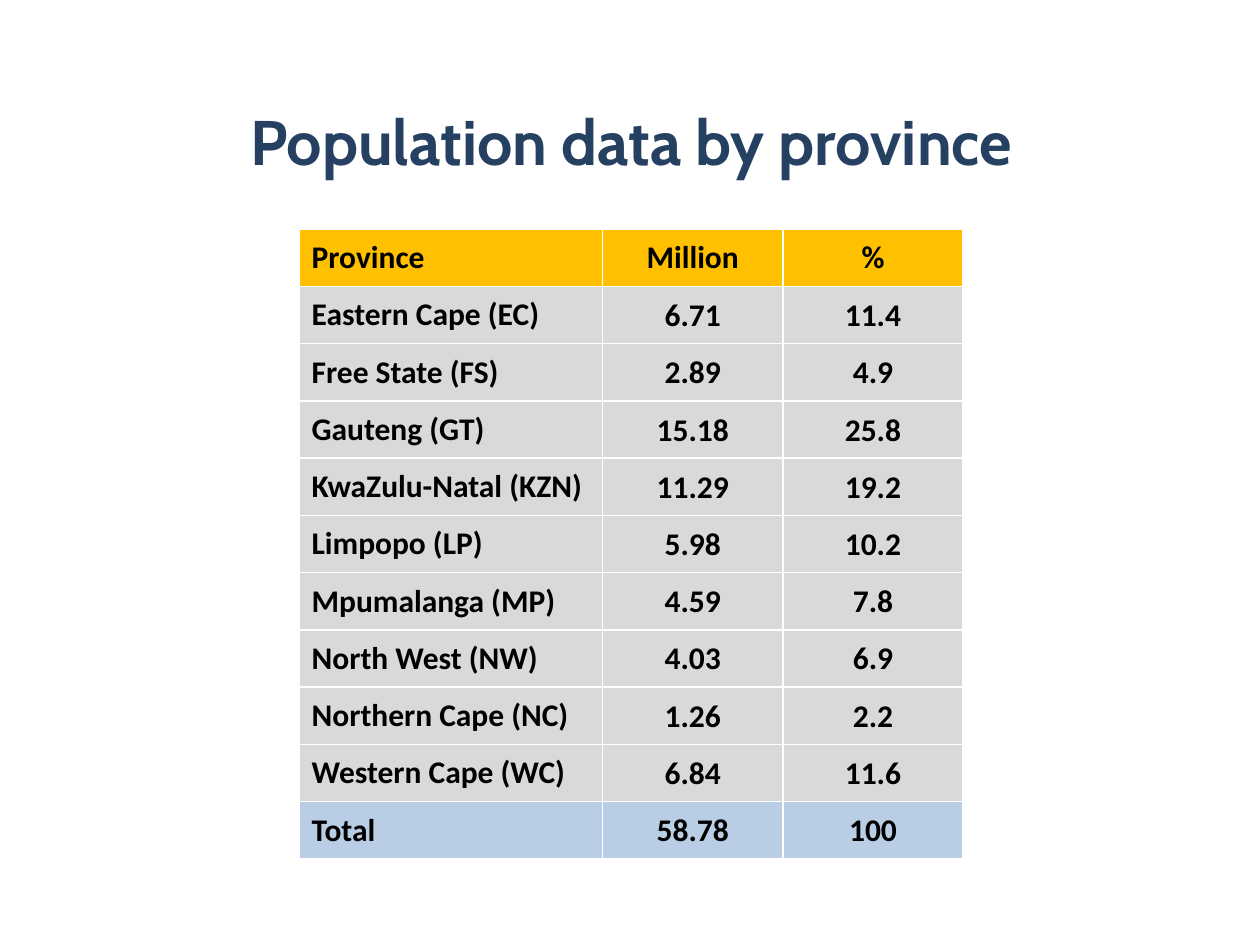
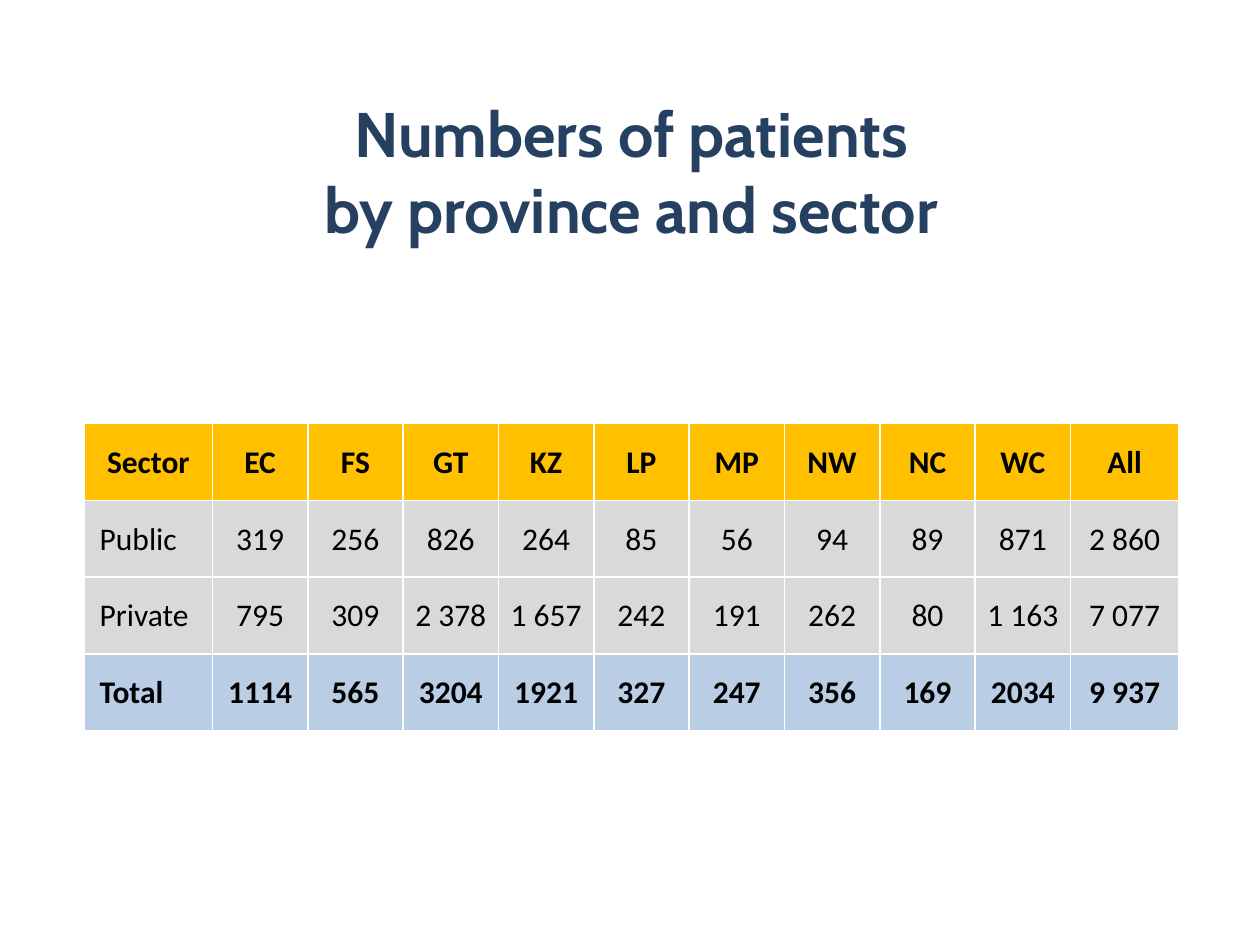
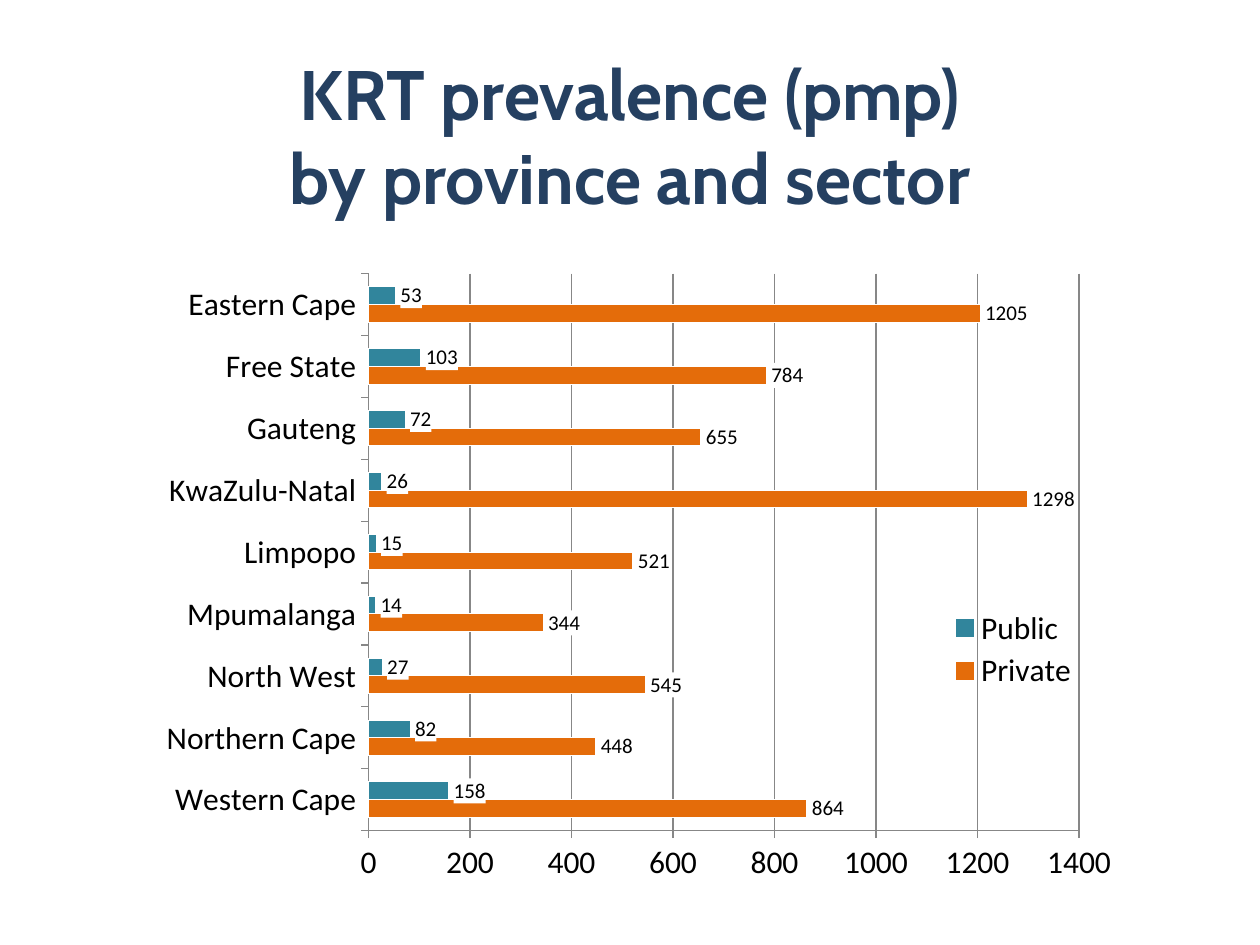
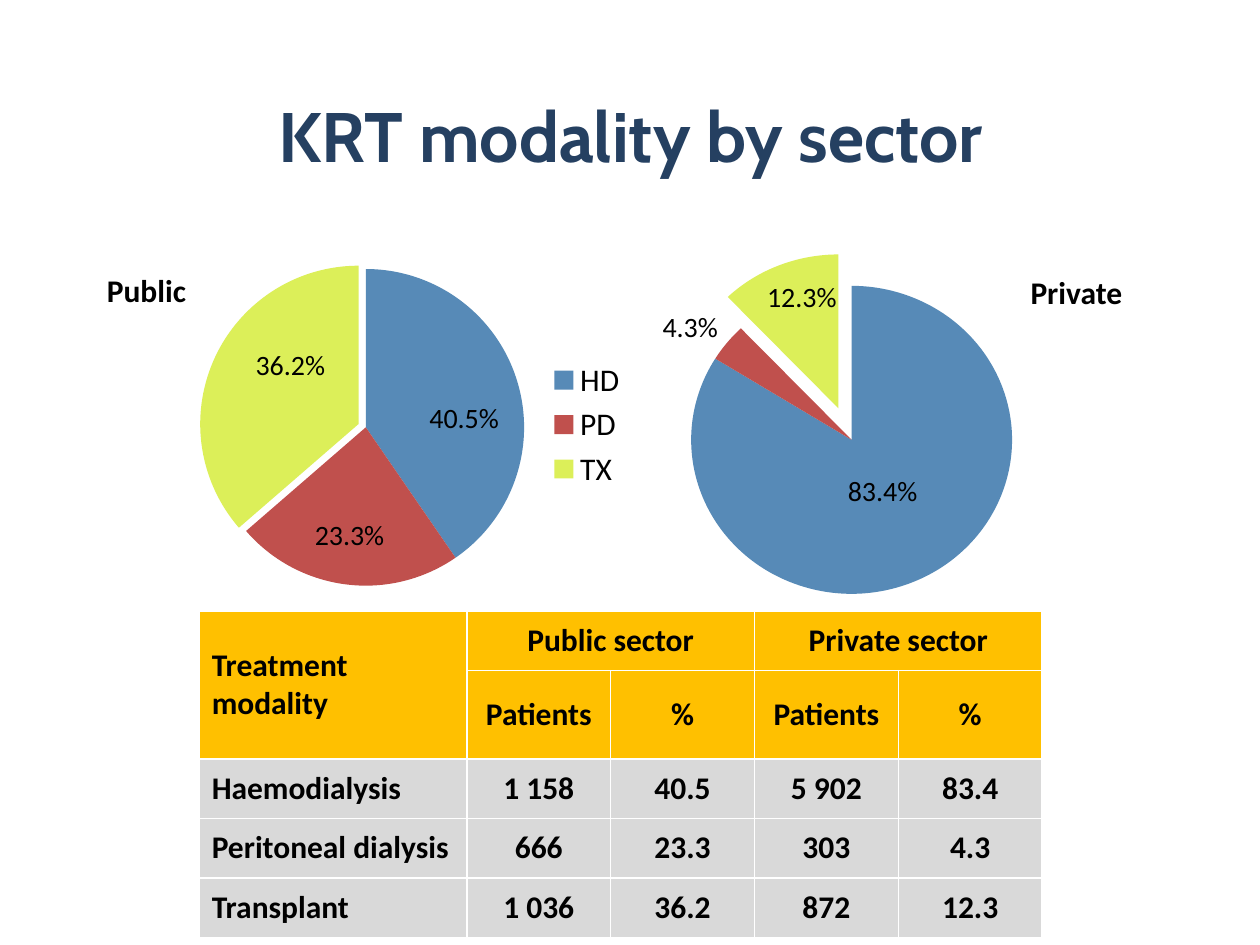
"""Build four slides on kidney replacement therapy by province and sector."""
from lxml import etree
from pptx import Presentation
from pptx.chart.data import CategoryChartData
from pptx.dml.color import RGBColor
from pptx.enum.chart import XL_CHART_TYPE, XL_LABEL_POSITION, XL_LEGEND_POSITION, XL_TICK_MARK
from pptx.enum.text import MSO_ANCHOR, PP_ALIGN
from pptx.oxml.ns import qn
from pptx.util import Pt

BAR, PIE = XL_CHART_TYPE.BAR_CLUSTERED, XL_CHART_TYPE.PIE
OUT_END, RIGHT = XL_LABEL_POSITION.OUTSIDE_END, XL_LEGEND_POSITION.RIGHT
TICK_OUT = XL_TICK_MARK.OUTSIDE
MIDDLE, TOP = MSO_ANCHOR.MIDDLE, MSO_ANCHOR.TOP
LEFT, CENTER = PP_ALIGN.LEFT, PP_ALIGN.CENTER

COLORS = {"title": "254061", "text": "000000", "head": "FFC000", "body": "D9D9D9",
          "total": "B9CDE5", "white": "FFFFFF", "grid": "878787", "public": "31859C",
          "private": "E46C0A", "hd": "578AB7", "pd": "C0504D", "tx": "DCEF59"}
HEAD_FONT, FONT = "Cabin", "Calibri"
TIGHT = 0.7

PEOPLE = [
    ("Province", "Million", "%"),
    ("Eastern Cape (EC)", "6.71", "11.4"),
    ("Free State (FS)", "2.89", "4.9"),
    ("Gauteng (GT)", "15.18", "25.8"),
    ("KwaZulu-Natal (KZN)", "11.29", "19.2"),
    ("Limpopo (LP)", "5.98", "10.2"),
    ("Mpumalanga (MP)", "4.59", "7.8"),
    ("North West (NW)", "4.03", "6.9"),
    ("Northern Cape (NC)", "1.26", "2.2"),
    ("Western Cape (WC)", "6.84", "11.6"),
    ("Total", "58.78", "100"),
]
SECTORS = [
    ("Sector", "EC", "FS", "GT", "KZ", "LP", "MP", "NW", "NC", "WC", "All"),
    ("Public", "319", "256", "826", "264", "85", "56", "94", "89", "871", "2 860"),
    ("Private", "795", "309", "2 378", "1 657", "242", "191", "262", "80", "1 163", "7 077"),
    ("Total", "1114", "565", "3204", "1921", "327", "247", "356", "169", "2034", "9 937"),
]
MODES = [
    ("Treatment modality", "Public sector", "", "Private sector", ""),
    ("", "Patients", "%", "Patients", "%"),
    ("Haemodialysis", "1 158", "40.5", "5 902", "83.4"),
    ("Peritoneal dialysis", "666", "23.3", "303", "4.3"),
    ("Transplant", "1 036", "36.2", "872", "12.3"),
]
RATES = [
    ("Western Cape", 864, 158), ("Northern Cape", 448, 82), ("North West", 545, 27),
    ("Mpumalanga", 344, 14), ("Limpopo", 521, 15), ("KwaZulu-Natal", 1298, 26),
    ("Gauteng", 655, 72), ("Free State", 784, 103), ("Eastern Cape", 1205, 53),
]
PIES = [
    {"box": (110.9, 82.8, 254.9, 319.7), "cats": ("HD", "PD", "TX"), "vals": (40, 23, 36),
     "plot": (0.03, 0.22, 0.71, 0.57), "burst": 5, "legend": True},
    {"box": (371.5, 145.4, 232.6, 203.8), "cats": ("1", "2", "3"), "vals": (83, 4, 12),
     "plot": (0.1, 0.05, 0.79, 0.9), "burst": 22, "legend": False},
]
LABELS = [
    ("Public", (54, 151.2, 59.8, 28.8), 18, True),
    ("Private", (581.8, 152.6, 67.7, 28.8), 18, True),
    ("36.2%", (139, 195.1, 54.7, 26.6), 16, False),
    ("40.5%", (238.3, 225.4, 54.7, 26.6), 16, False),
    ("23.3%", (172.8, 292.3, 54.7, 26.6), 16, False),
    ("12.3%", (431.3, 156.2, 54.7, 26.6), 16, False),
    ("83.4%", (477.4, 267.1, 54.7, 26.6), 16, False),
    ("4.3%", (371.5, 173.5, 46.8, 26.6), 16, False),
]


def tint(name):
    return RGBColor.from_string(COLORS[name])


def pts(box):
    return [Pt(n) for n in box]


def style(font, size, bold=False, color="text", face=FONT):
    font.size, font.bold, font.name = Pt(size), bold, face
    font.color.rgb = tint(color)


def add_text(slide, lines, box, size, bold=False, color="text", face=FONT,
             align=LEFT, anchor=TOP, wrap=False):
    frame = slide.shapes.add_textbox(*pts(box)).text_frame
    frame.word_wrap, frame.vertical_anchor = wrap, anchor
    para = frame.paragraphs[0]
    para.alignment = align
    for i, line in enumerate(lines):
        if i:
            para.add_line_break()
        run = para.add_run()
        run.text = line
        style(run.font, size, bold, color, face)


def add_title(slide, lines, box, size):
    add_text(slide, lines, box, size, True, "title", HEAD_FONT, CENTER, MIDDLE, True)


def add_grid(slide, rows, box, widths, heads=1, total=True, rule=True, plain=(), pad=None, spans=()):
    table = slide.shapes.add_table(len(rows), len(widths), *pts(box)).table
    table.first_row, table.horz_banding = rule, False
    for col, width in zip(table.columns, widths):
        col.width = Pt(width)
    for row in table.rows:
        row.height = Pt(box[3] / len(rows))
    for r, row in enumerate(rows):
        last = total and r == len(rows) - 1
        fill = "head" if r < heads else "total" if last else "body"
        for c, text in enumerate(row):
            cell = table.cell(r, c)
            cell.fill.solid()
            cell.fill.fore_color.rgb = tint(fill)
            cell.vertical_anchor = MIDDLE
            if pad is not None and (pad or (r and c)):
                cell.margin_left = Pt(pad if r and not c else TIGHT)
                cell.margin_right = cell.margin_top = Pt(TIGHT)
                cell.margin_bottom = 0
            if not text:
                continue
            para = cell.text_frame.paragraphs[0]
            para.alignment = CENTER if c or (pad and not r) else LEFT
            run = para.add_run()
            run.text = text
            style(run.font, 18, r not in plain)
    for top, left, low, right in spans:
        table.cell(top, left).merge(table.cell(low, right))


def set_place(part, before, place, inner=False):
    for old in part.findall(qn("c:layout")):
        part.remove(old)
    layout = etree.Element(qn("c:layout"))
    manual = etree.SubElement(layout, qn("c:manualLayout"))
    items = [("layoutTarget", "inner")] if inner else []
    items += [("xMode", "edge"), ("yMode", "edge"), *zip("xywh", place)]
    for tag, value in items:
        etree.SubElement(manual, qn("c:" + tag)).set("val", str(value))
    if before is None:
        part.insert(0, layout)
    else:
        part.find(qn(before)).addnext(layout)


def add_plot(slide, kind, box, cats, series, place, legend):
    data = CategoryChartData()
    data.categories = cats
    for name, vals in series:
        data.add_series(name, vals)
    chart = slide.shapes.add_chart(kind, *pts(box), data).chart
    style(chart.font, 18)
    chart.has_title = False
    chart.has_legend = legend
    if legend:
        chart.legend.position = RIGHT
        chart.legend.include_in_layout = False
    area = chart.plots[0]._element.getparent()
    set_place(area, None, place, True)
    return chart


def add_bars(slide):
    cats, private, public = zip(*RATES)
    chart = add_plot(slide, BAR, (79.2, 145.4, 561.6, 364.3), cats,
                     [("Private", private), ("Public", public)], (0.234, 0.03, 0.723, 0.874), True)
    set_place(chart.legend._element, "c:legendPos", (0.81, 0.55, 0.16, 0.14))
    plot = chart.plots[0]
    plot.gap_width, plot.overlap, plot.vary_by_categories = 150, 0, False
    for bars in plot.series:
        bars.format.fill.solid()
        bars.format.fill.fore_color.rgb = tint(bars.name.lower())
        bars.format.line.color.rgb = tint("white")
        tags = bars.data_labels
        tags.show_value, tags.position = True, OUT_END
        tags.number_format, tags.number_format_is_linked = "0", False
        style(tags.font, 12)
        props = etree.Element(qn("c:spPr"))
        solid = etree.SubElement(props, qn("a:solidFill"))
        etree.SubElement(solid, qn("a:srgbClr")).set("val", COLORS["white"])
        tags._element.find(qn("c:txPr")).addprevious(props)
    for axis in (chart.category_axis, chart.value_axis):
        axis.major_tick_mark = TICK_OUT
        axis.format.line.color.rgb = tint("grid")
        style(axis.tick_labels.font, 18)
    chart.category_axis.has_major_gridlines = False
    scale = chart.value_axis
    scale.minimum_scale, scale.maximum_scale, scale.major_unit = 0, 1400, 200
    scale.has_major_gridlines = True
    scale.major_gridlines.format.line.color.rgb = tint("grid")
    scale.tick_labels.number_format = "0"
    scale.tick_labels.number_format_is_linked = False


def add_pie(slide, pie):
    chart = add_plot(slide, PIE, pie["box"], pie["cats"], [("Series 1", pie["vals"])],
                     pie["plot"], pie["legend"])
    plot = chart.plots[0]
    plot.vary_by_categories = True
    ring = plot.series[0]
    for i, name in enumerate(("hd", "pd", "tx")):
        fill = ring.points[i].format.fill
        fill.solid()
        fill.fore_color.rgb = tint(name)
    wedge = ring._element.findall(qn("c:dPt"))[-1]
    for old in wedge.findall(qn("c:explosion")):
        wedge.remove(old)
    burst = etree.Element(qn("c:explosion"))
    burst.set("val", str(pie["burst"]))
    wedge.find(qn("c:spPr")).addprevious(burst)


def main():
    deck = Presentation()
    deck.slide_width, deck.slide_height = Pt(720), Pt(540)
    one, two, three, four = [deck.slides.add_slide(deck.slide_layouts[6]) for _ in range(4)]

    add_title(one, ["Population data by province"], (36.7, 49, 648, 62.6), 36)
    add_grid(one, PEOPLE, (170.9, 131, 379.5, 360), [173.5, 103, 103], pad=0)

    add_title(two, ["Numbers of patients", "by province and sector"], (36.7, 60.5, 648, 73.4), 36)
    add_grid(two, SECTORS, (48.2, 242, 625.6, 175.7), [73.2] + [54.5] * 9 + [61.9],
             rule=False, plain=(1, 2), pad=8.8)

    add_bars(three)
    add_title(three, ["KRT prevalence (pmp)", "by province and sector"], (0, 31.7, 720, 90), 40)

    add_title(four, ["KRT modality by sector"], (76.3, 31.7, 568, 90), 40)
    add_pie(four, PIES[0])
    add_grid(four, MODES, (113.8, 349.2, 481.7, 170), [153] + [82.2] * 4, heads=2, total=False,
             spans=[(0, 0, 1, 0), (0, 1, 0, 2), (0, 3, 0, 4)])
    add_pie(four, PIES[1])
    for text, box, size, bold in LABELS:
        add_text(four, [text], box, size, bold)

    deck.save("out.pptx")


if __name__ == "__main__":
    main()
